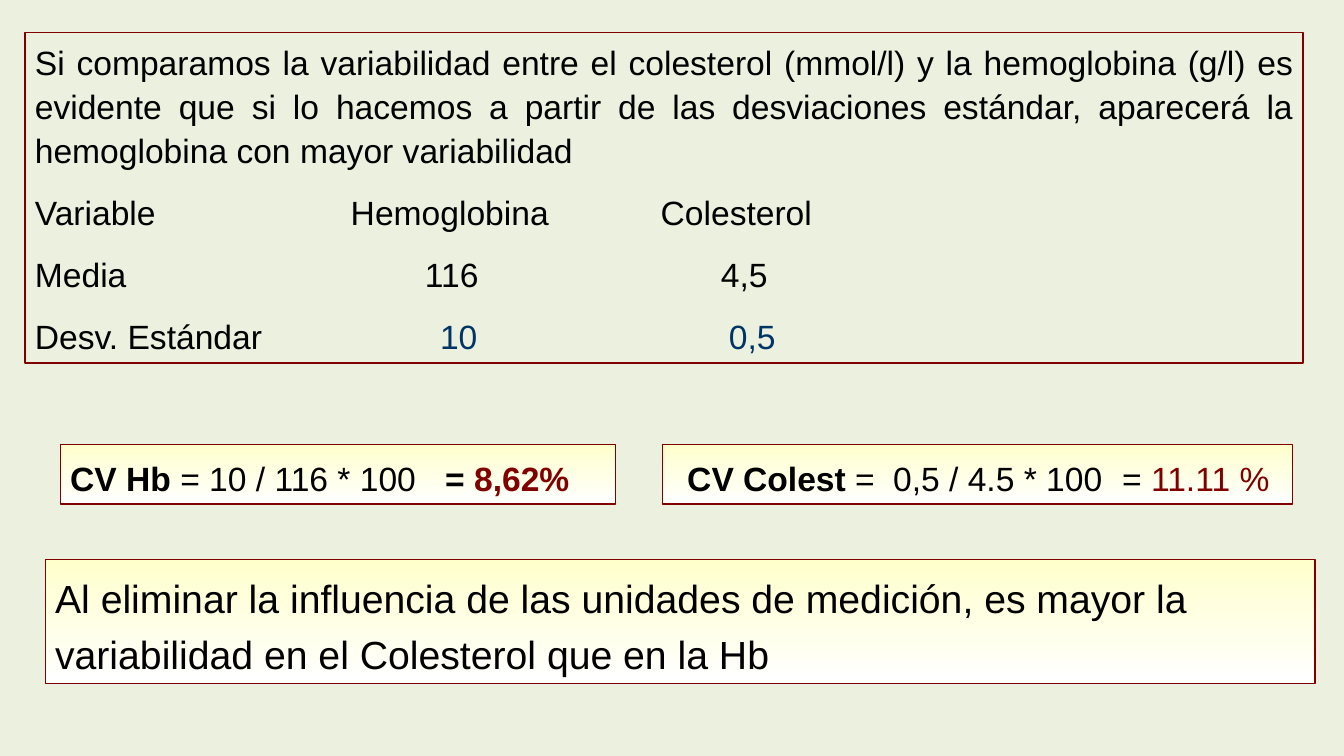
from lxml.etree import SubElement
from pptx import Presentation
from pptx.dml.color import RGBColor
from pptx.enum.shapes import MSO_SHAPE
from pptx.enum.text import MSO_ANCHOR, MSO_AUTO_SIZE, PP_ALIGN
from pptx.oxml.ns import qn
from pptx.util import Cm, Pt

BLACK, MAROON, NAVY = "000000", "800000", "003366"


def color(hex_code):
    return RGBColor.from_string(hex_code)


def add_run(paragraph, text, size=24, bold=False, ink=BLACK):
    run = paragraph.add_run()
    run.text = text
    run.font.name = "Arial"
    run.font.size = Pt(size)
    run.font.bold = bold
    run.font.color.rgb = color(ink)


def format_paragraph(paragraph, spacing, align=PP_ALIGN.LEFT, tabs=()):
    paragraph.alignment = align
    paragraph.line_spacing = spacing
    paragraph.space_before = Pt(12.5)
    if tabs:
        tab_list = SubElement(paragraph._p.get_or_add_pPr(), qn("a:tabLst"))
        for stop in tabs:
            SubElement(tab_list, qn("a:tab"), pos=str(Cm(stop)), algn="l")


def add_panel(slide, box, gradient=True):
    """Draw a maroon-edged panel and return its text frame."""
    panel = slide.shapes.add_shape(MSO_SHAPE.RECTANGLE, *map(Cm, box))
    panel.shadow.inherit = False
    panel.line.color.rgb = color(MAROON)
    panel.line.width = Pt(1)
    if gradient:
        panel.fill.gradient()
        panel.fill.gradient_angle = 270
        for stop, position, tint in zip(panel.fill.gradient_stops, (0, 1), ("FFFFCC", "FFFFFF")):
            stop.position = position
            stop.color.rgb = color(tint)
    else:
        panel.fill.background()
    frame = panel.text_frame
    frame.word_wrap = True
    frame.auto_size = MSO_AUTO_SIZE.SHAPE_TO_FIT_TEXT
    frame.vertical_anchor = MSO_ANCHOR.TOP
    return frame


def add_comparison(slide, box):
    frame = add_panel(slide, box, gradient=False)
    intro = frame.paragraphs[0]
    format_paragraph(intro, 1.1, PP_ALIGN.JUSTIFY)
    add_run(intro, "Si comparamos la variabilidad entre el colesterol (mmol/l) y la "
                   "hemoglobina (g/l) es evidente que si lo hacemos a partir de las "
                   "desviaciones estándar, aparecerá la hemoglobina con mayor variabilidad")
    # Each row: label, values, value colour, tab stops
    rows = [
        ("Variable", "Hemoglobina\tColesterol", BLACK, (7.96, 15.77)),
        ("Media", "116\t4,5", BLACK, (9.83, 17.29)),
        ("Desv. Estándar", "10\t0,5", NAVY, (10.21, 17.49)),
    ]
    for label, values, ink, tabs in rows:
        row = frame.add_paragraph()
        format_paragraph(row, 1.1, tabs=tabs)
        add_run(row, label + "\t")
        add_run(row, values, ink=ink)


def add_coefficient(slide, box, parts, tabs):
    formula = add_panel(slide, box).paragraphs[0]
    format_paragraph(formula, 1.2, tabs=tabs)
    for text, bold, ink in parts:
        add_run(formula, text, bold=bold, ink=ink)


def add_conclusion(slide, box):
    conclusion = add_panel(slide, box).paragraphs[0]
    format_paragraph(conclusion, 1.2)
    add_run(conclusion, "Al eliminar la influencia de las unidades de medición, es mayor la "
                        "variabilidad en el Colesterol que en la Hb", size=28)


def main():
    deck = Presentation()
    deck.slide_width, deck.slide_height = Cm(33.87), Cm(19.05)
    slide = deck.slides.add_slide(deck.slide_layouts[6])
    slide.background.fill.solid()
    slide.background.fill.fore_color.rgb = color("EBF1DE")

    # Data for both variables
    add_comparison(slide, (0.63, 0.82, 32.21, 8.33))

    # Coefficients of variation
    add_coefficient(slide, (1.52, 11.2, 14, 1.5), [
        ("CV Hb ", True, BLACK),
        ("= 10 / 116 * 100\t", False, BLACK),
        ("= ", True, BLACK),
        ("8,62%", True, MAROON),
    ], tabs=(9.45,))
    add_coefficient(slide, (16.69, 11.2, 15.88, 1.5), [
        ("\tCV Colest ", True, BLACK),
        ("=\t0,5 / 4.5 * 100\t= ", False, BLACK),
        ("11.11 %", False, MAROON),
    ], tabs=(0.38, 5.57, 11.34))

    # Conclusion
    add_conclusion(slide, (1.14, 14.1, 32, 3.12))
    deck.save("out.pptx")


if __name__ == "__main__":
    main()
